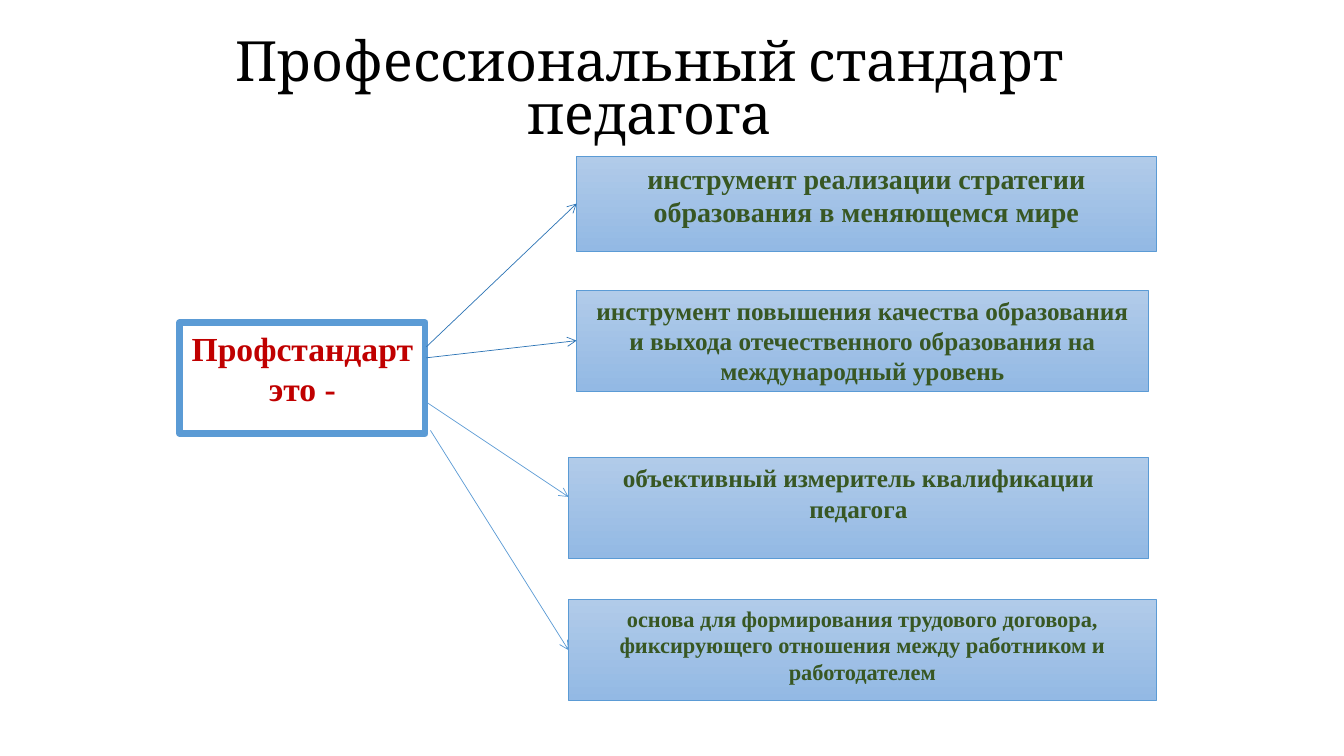
from dataclasses import dataclass
from typing import Any

from lxml import etree
from pptx import Presentation
from pptx import util as u
from pptx.dml import color as dml
from pptx.enum import shapes, text
from pptx.oxml import ns

COLORS = {
    "title": "000000", "term": "C00000", "statement": "385723",
    "white": "FFFFFF", "border": "5B9BD5", "dark_arrow": "2E75B6",
    "gradient_top": "B1CBE9", "gradient_bottom": "93B9E4",
}
WIDTH, HEIGHT = u.Inches(13.33), u.Inches(7.5)
LEFT_SIDE = 1


@dataclass
class Area:
    left: float
    top: float
    width: float
    height: float


@dataclass
class Statement:
    wording: str
    size: int
    area: Area
    arrow_color: str
    arrow_start: tuple[float, float]
    arrow_end_row: float | None = None


TITLE_AREA = Area(10.05, 4, 76.58, 16.27)
TERM_AREA = Area(13.35, 42.67, 18.3, 14.67)
STATEMENTS = [
    Statement("инструмент реализации стратегии образования в меняющемся мире", 20,
              Area(42.9, 20.67, 43.13, 12.53), "dark_arrow", (31.73, 45.87)),
    Statement("инструмент повышения качества образования и выхода отечественного "
              "образования на международный уровень", 18,
              Area(42.9, 38.4, 42.53, 13.33), "dark_arrow", (31.73, 47.33)),
    Statement("объективный измеритель квалификации педагога", 18,
              Area(42.3, 60.53, 43.13, 13.33), "border", (31.73, 53.2), 65.73),
    Statement("основа для формирования трудового договора, фиксирующего отношения "
              "между работником и работодателем", 16,
              Area(42.3, 79.33, 43.73, 13.33), "border", (32.03, 56.93)),
]


def across(percent: float) -> int:
    return round(WIDTH * percent / 100)


def down(percent: float) -> int:
    return round(HEIGHT * percent / 100)


def rgb(name: str) -> dml.RGBColor:
    return dml.RGBColor.from_string(COLORS[name])


def apply(target: Any, values: dict[str, Any]) -> None:
    for name, value in values.items():
        setattr(target, name, value)


def bounds(area: Area) -> dict[str, int]:
    return {"left": across(area.left), "top": down(area.top),
            "width": across(area.width), "height": down(area.height)}


def write(shape: Any, wording: str, font: dict[str, Any], color: str,
          anchor: Any, spacing: dict[str, Any]) -> None:
    frame = shape.text_frame
    apply(frame, {"word_wrap": True, "auto_size": text.MSO_AUTO_SIZE.NONE,
                  "vertical_anchor": anchor})
    paragraph = frame.paragraphs[0]
    apply(paragraph, {"alignment": text.PP_ALIGN.CENTER, **spacing})
    run = paragraph.add_run()
    run.text = wording
    apply(run.font, font)
    run.font.color.rgb = rgb(color)


def add_box(slide: Any, area: Area, wording: str, size: int, color: str,
            border: float, spacing: dict[str, Any]) -> Any:
    box = slide.shapes.add_shape(shapes.MSO_SHAPE.RECTANGLE, **bounds(area))
    box.shadow.inherit = False
    box.line.color.rgb = rgb("border")
    box.line.width = u.Pt(border)
    font = {"name": "Times New Roman", "size": u.Pt(size), "bold": True}
    write(box, wording, font, color, text.MSO_ANCHOR.TOP, spacing)
    return box


def add_term(slide: Any) -> None:
    box = add_box(slide, TERM_AREA, "Профстандарт это -", 24, "term", 4.5,
                  {"space_after": u.Pt(10)})
    box.fill.solid()
    box.fill.fore_color.rgb = rgb("white")


def add_statement(slide: Any, statement: Statement) -> Any:
    box = add_box(slide, statement.area, statement.wording, statement.size,
                  "statement", 0.5, {})
    box.fill.gradient()
    box.fill.gradient_angle = 270
    for stop, name, position in zip(box.fill.gradient_stops,
                                    ("gradient_top", "gradient_bottom"), (0, 1)):
        stop.color.rgb = rgb(name)
        stop.position = position
    return box


def add_arrow(slide: Any, statement: Statement, box: Any) -> None:
    column, row = statement.arrow_start
    area = statement.area
    end_row = statement.arrow_end_row or area.top + area.height / 2
    arrow = slide.shapes.add_connector(
        shapes.MSO_CONNECTOR.STRAIGHT, across(column), down(row),
        across(area.left), down(end_row))
    if statement.arrow_end_row is None:
        arrow.end_connect(box, LEFT_SIDE)
    arrow.line.color.rgb = rgb(statement.arrow_color)
    arrow.line.width = u.Pt(0.5)
    line = arrow.line._get_or_add_ln()
    etree.SubElement(line, ns.qn("a:tailEnd"), type="arrow")
    etree.SubElement(arrow._element.spPr, ns.qn("a:effectLst"))


def main() -> None:
    presentation = Presentation()
    apply(presentation, {"slide_width": WIDTH, "slide_height": HEIGHT})
    slide = presentation.slides.add_slide(presentation.slide_layouts[5])
    title = slide.shapes.title
    apply(title, bounds(TITLE_AREA))
    write(title, "Профессиональный стандарт педагога",
          {"name": "Cambria", "size": u.Pt(39.6)}, "title",
          text.MSO_ANCHOR.MIDDLE, {"line_spacing": 0.8})
    add_term(slide)
    boxes = [add_statement(slide, statement) for statement in STATEMENTS]
    for statement, box in zip(STATEMENTS, boxes):
        add_arrow(slide, statement, box)
    presentation.save("out.pptx")


if __name__ == "__main__":
    main()
